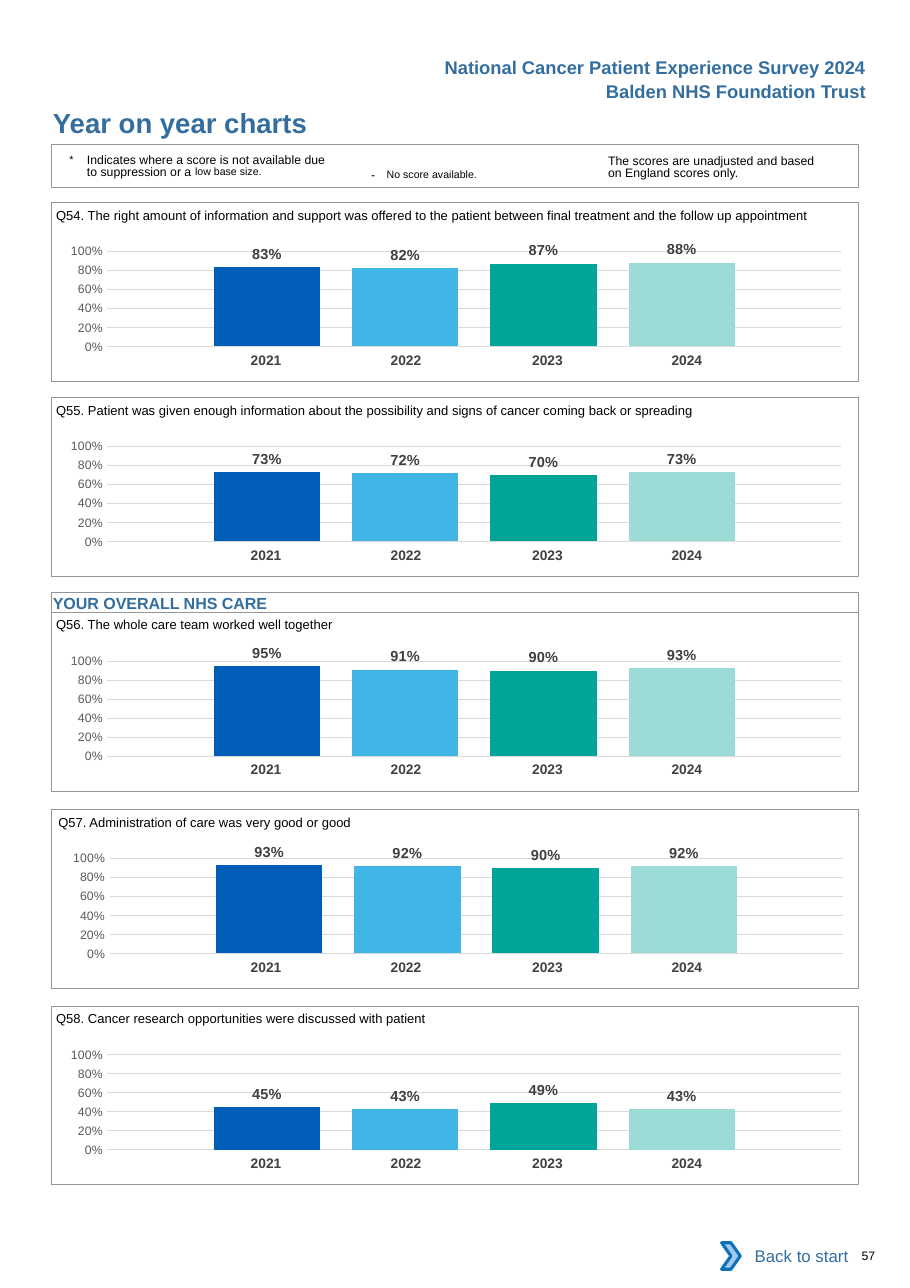
import pptx
import pptx.chart.data
import pptx.dml.color
import pptx.enum.chart
import pptx.enum.shapes
import pptx.enum.text
import pptx.oxml
import pptx.oxml.ns
import pptx.util
from pptx.util import Inches

COLORS = {
    "title": "336E9F", "text": "000000", "frame": "939598", "year": "414042",
    "label": "404040", "axis": "595959", "grid": "D9D9D9", "white": "FFFFFF",
    "arrow": "A8C7E9", "edge": "0A74BB",
}
YEARS = {"2021": "005EB8", "2022": "41B6E6", "2023": "00A499", "2024": "9CDCD7"}
LEFT, WIDTH = 0.47, 7.32

# Frame top, shift to the right, question, score for each year
PANELS = [
    (1.84, 0, "Q54. The right amount of information and support was offered to the "
     "patient between final treatment and the follow up appointment",
     (0.83, 0.82, 0.87, 0.88)),
    (3.61, 0, "Q55. Patient was given enough information about the possibility and "
     "signs of cancer coming back or spreading", (0.73, 0.72, 0.70, 0.73)),
    (5.56, 0, "Q56. The whole care team worked well together",
     (0.95, 0.91, 0.90, 0.93)),
    (7.35, 0.02, "Q57. Administration of care was very good or good",
     (0.93, 0.92, 0.90, 0.92)),
    (9.13, 0, "Q58. Cancer research opportunities were discussed with patient",
     (0.45, 0.43, 0.49, 0.43)),
]

ALIGN = pptx.enum.text.PP_ALIGN
SHAPE = pptx.enum.shapes.MSO_SHAPE


def rgb(name):
    return pptx.dml.color.RGBColor.from_string(COLORS.get(name, name))


def set_font(font, size, color="text", bold=False):
    font.name = "Arial"
    font.size = pptx.util.Pt(size)
    font.bold = bold
    font.color.rgb = rgb(color)


def set_text(frame, text, size, color="text", bold=False, align=ALIGN.LEFT,
             inset=(0, 0, 0, 0), wrap=True):
    """Fill a text frame; inset is left, top, right, bottom in inches."""
    frame.word_wrap = wrap
    frame.auto_size = pptx.enum.text.MSO_AUTO_SIZE.NONE
    frame.vertical_anchor = pptx.enum.text.MSO_ANCHOR.TOP
    (frame.margin_left, frame.margin_top,
     frame.margin_right, frame.margin_bottom) = map(Inches, inset)
    para = frame.paragraphs[0]
    para.text = text
    para.alignment = align
    set_font(para.font, size, color, bold)
    return para


def add_text(slide, box, text, size, **style):
    shape = slide.shapes.add_textbox(*map(Inches, box))
    return set_text(shape.text_frame, text, size, **style)


def add_raised(para, text, rise):
    """Add a small 12 pt run, raised by a percentage."""
    run = para.add_run()
    run.text = text
    run.font.size = pptx.util.Pt(12)
    run.font._element.set("baseline", str(rise * 1000))


def hang(para, inches):
    props = para._p.get_or_add_pPr()
    props.set("marL", str(Inches(inches)))
    props.set("indent", str(-Inches(inches)))


def add_shape(slide, kind, box, fill=None, line=None, weight=0.5):
    shape = slide.shapes.add_shape(kind, *map(Inches, box))
    shape.shadow.inherit = False
    if fill:
        shape.fill.solid()
        shape.fill.fore_color.rgb = rgb(fill)
    else:
        shape.fill.background()
    if line:
        shape.line.color.rgb = rgb(line)
        shape.line.width = pptx.util.Pt(weight)
    else:
        shape.line.fill.background()
    return shape


def add_years(slide, top):
    box = map(Inches, (1.73, top, 5.15, 0.27))
    table = slide.shapes.add_table(1, len(YEARS), *box).table
    table.first_row = table.horz_banding = False
    table.rows[0].height = Inches(0.27)
    widths, rights = (1.27, 1.27, 1.34, 1.27), (0, 0, 0.04, 0.12)
    for col, (year, width, right) in enumerate(zip(YEARS, widths, rights)):
        table.columns[col].width = Inches(width)
        cell = table.cell(0, col)
        cell.fill.background()
        cell.margin_left, cell.margin_right = Inches(0.1), Inches(right)
        cell.text = year
        para = cell.text_frame.paragraphs[0]
        para.alignment = ALIGN.CENTER
        set_font(para.font, 9, "year", True)


def set_plot(chart, x, y, width, height):
    """Fix the inner plot area, in parts of the chart's size."""
    area = chart.element.find(".//" + pptx.oxml.ns.qn("c:plotArea"))
    for old in area.findall(pptx.oxml.ns.qn("c:layout")):
        area.remove(old)
    area.insert(0, pptx.oxml.parse_xml(
        f'<c:layout {pptx.oxml.ns.nsdecls("c")}><c:manualLayout>'
        '<c:layoutTarget val="inner"/><c:xMode val="edge"/><c:yMode val="edge"/>'
        f'<c:x val="{x}"/><c:y val="{y}"/><c:w val="{width}"/><c:h val="{height}"/>'
        '</c:manualLayout></c:layout>'))


def add_chart(slide, left, top, scores):
    kinds = pptx.enum.chart
    data = pptx.chart.data.CategoryChartData(number_format="0%")
    data.categories = ["1"]
    for num, score in enumerate(scores, 1):
        data.add_series(f"Series {num}", [score])
    box = map(Inches, (left, top, WIDTH, 1.29))
    chart = slide.shapes.add_chart(
        kinds.XL_CHART_TYPE.COLUMN_CLUSTERED, *box, data).chart
    chart.has_legend = chart.has_title = False
    chart.font.name, chart.font.size = "Calibri", pptx.util.Pt(10)
    chart.font.color.rgb = rgb("text")
    chart.category_axis.visible = False

    axis = chart.value_axis
    axis.minimum_scale, axis.maximum_scale, axis.major_unit = 0, 1, 0.2
    axis.major_tick_mark = axis.minor_tick_mark = kinds.XL_TICK_MARK.NONE
    axis.format.line.fill.background()
    axis.major_gridlines.format.line.color.rgb = rgb("grid")
    axis.major_gridlines.format.line.width = pptx.util.Pt(0.75)
    axis.tick_labels.number_format = "0%"
    axis.tick_labels.number_format_is_linked = False
    set_font(axis.tick_labels.font, 8, "axis")

    plot = chart.plots[0]
    plot.gap_width, plot.overlap, plot.vary_by_categories = 200, -30, False
    for series, color in zip(plot.series, YEARS.values()):
        series.format.fill.solid()
        series.format.fill.fore_color.rgb = rgb(color)
        labels = series.data_labels
        labels.show_value = True
        labels.position = kinds.XL_LABEL_POSITION.OUTSIDE_END
        labels.number_format, labels.number_format_is_linked = "0%", False
        set_font(labels.font, 9.5, "label", True)
    set_plot(chart, 0.08, 0.14, 0.91, 0.67)


def add_panel(slide, top, shift, question, scores):
    add_text(slide, (0.51 + shift, top - 0.05, 7.3, 0.24), question, 8.5,
             inset=(0, 0.09, 0, 0))
    add_years(slide, top + 1.31)
    add_chart(slide, 0.39 + shift, top + 0.26, scores)
    add_shape(slide, SHAPE.RECTANGLE, (LEFT, top, WIDTH, 1.62), line="frame")


def add_notes(slide):
    inset = (0, 0.03, 0, 0)
    basis = add_text(slide, (5.52, 1.38, 2.01, 0.27),
                     "The scores are unadjusted and based on England scores only.",
                     8, inset=inset)
    dash = add_text(slide, (3.37, 1.46, 1.7, 0.2), "-\t", 8)
    add_raised(dash, "No score available.", 3)
    hang(dash, 0.14)
    star = add_text(slide, (0.63, 1.38, 2.4, 0.27), "", 8, inset=inset)
    add_raised(star, "*\t", 3)
    star.add_run().text = "Indicates where a score is not available due to suppression or a "
    add_raised(star, "low base size.", 7)
    hang(star, 0.16)
    basis.line_spacing = star.line_spacing = pptx.util.Pt(8.1)
    add_shape(slide, SHAPE.RECTANGLE, (LEFT, 1.31, WIDTH, 0.39),
              line="frame", weight=0.75)


def add_header(slide):
    title = slide.shapes.title
    title.left, title.top, title.width, title.height = map(
        Inches, (0.48, 0.96, 4.5, 0.3))
    set_text(title.text_frame, "Year on year charts", 18, "title", True)
    for box, text in (
            ((3.92, 0.46, 4.04, 0.3), "National Cancer Patient Experience Survey 2024"),
            ((5.39, 0.68, 2.57, 0.3), "Balden NHS Foundation Trust")):
        add_text(slide, box, text, 12, color="title", bold=True, align=ALIGN.RIGHT,
                 inset=(0.1, 0.05, 0.1, 0.05), wrap=False)


def add_footer(slide):
    back = add_shape(slide, SHAPE.RECTANGLE, (6.62, 11.19, 1.18, 0.42), fill="white")
    set_text(back.text_frame, "Back to start", 11, "title", align=ALIGN.RIGHT,
             inset=(0.1, 0.05, 0.1, 0.05))
    back.text_frame.vertical_anchor = pptx.enum.text.MSO_ANCHOR.MIDDLE
    add_shape(slide, SHAPE.CHEVRON, (6.55, 11.28, 0.17, 0.24), "arrow", "edge", 2)
    add_text(slide, (7.82, 11.33, 0.41, 0.13), "57", 8)


def main():
    deck = pptx.Presentation()
    deck.slide_width, deck.slide_height = Inches(8.26), Inches(11.69)
    slide = deck.slides.add_slide(deck.slide_layouts[5])
    add_header(slide)
    add_notes(slide)
    for panel in PANELS:
        add_panel(slide, *panel)
    section = add_shape(slide, SHAPE.RECTANGLE, (LEFT, 5.38, WIDTH, 0.18), line="frame")
    set_text(section.text_frame, "YOUR OVERALL NHS CARE", 10.5, "title", True,
             inset=(0.01, 0.01, 0, 0))
    add_footer(slide)
    deck.save("out.pptx")


if __name__ == "__main__":
    main()
